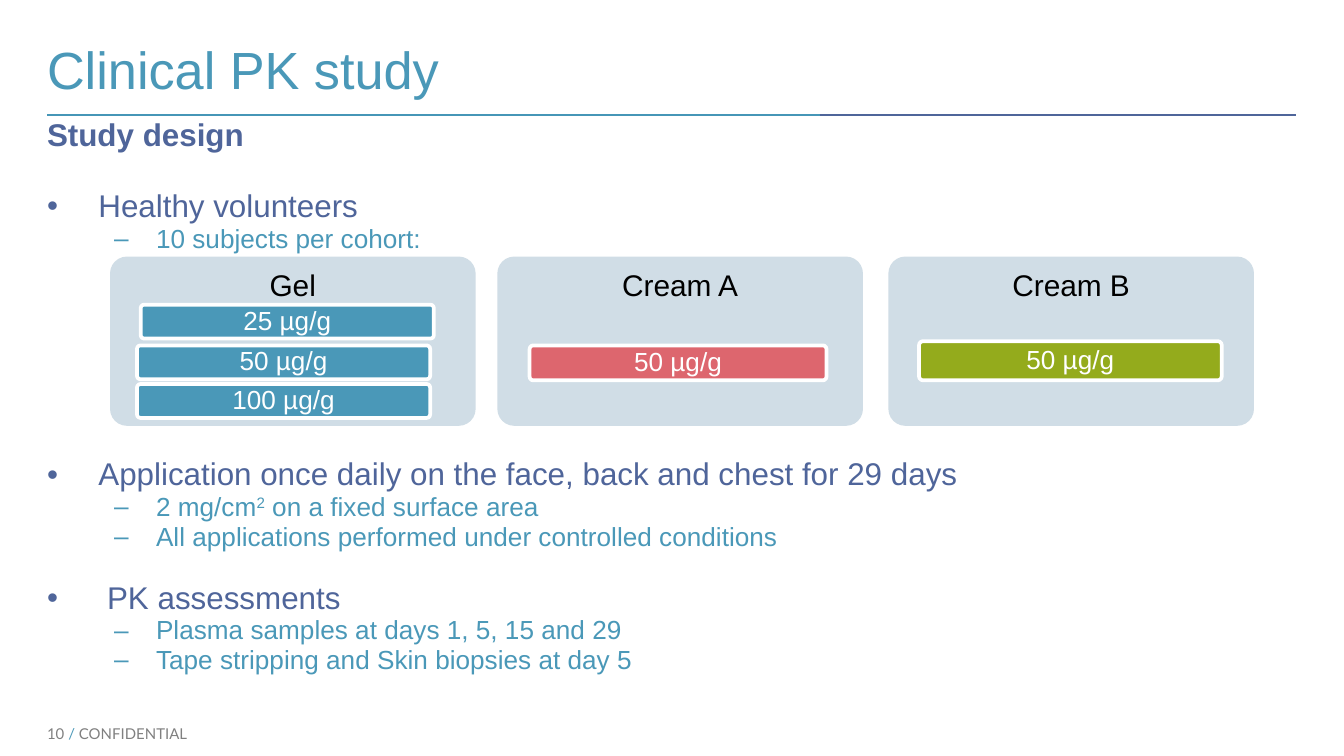
from lxml import etree
from pptx import Presentation
from pptx import util as u
from pptx.dml.color import RGBColor
from pptx.enum import shapes, text
from pptx.oxml.ns import qn

TEAL, NAVY, GREY = "4A98B8", "4F659A", "808080"
PALE, RED, GREEN = "D0DDE6", "DD666E", "94AB1C"
WHITE, BLACK = "FFFFFF", "000000"

PANELS = [
    # left, name, colour, pills as (label, x, y, width, height)
    (2.08, "Gel", TEAL, [("25 µg/g", 0.58, 0.91, 5.54, 0.64),
                         ("50 µg/g", 0.51, 1.68, 5.54, 0.64),
                         ("100 µg/g", 0.51, 2.41, 5.54, 0.64)]),
    (9.4, "Cream A", RED, [("50 µg/g", 0.61, 1.68, 5.61, 0.66)]),
    (16.79, "Cream B", GREEN, [("50 µg/g", 0.58, 1.6, 5.72, 0.74)]),
]
POINTS = [
    # level, space before in points, runs
    (0, 0, ["Study design"]),
    (1, 19, ["Healthy volunteers"]),
    (2, 0, ["10 subjects per cohort:"]),
    (1, 109, ["Application once daily on the face, back and chest for 29 days"]),
    (2, 0, ["2 mg/cm", "2", " on a fixed surface area"]),
    (2, 0, ["All applications performed under controlled conditions"]),
    (1, 15.5, [" PK assessments"]),
    (2, 0, ["Plasma samples at days 1, 5, 15 and 29"]),
    (2, 0, ["Tape stripping and Skin biopsies at day 5"]),
]
LEVELS = [
    dict(size=16.8, color=NAVY, bold=True),
    dict(size=16.8, color=NAVY, mark="•", left=0.97, hang=0.97),
    dict(size=14, color=TEAL, mark="–", left=2.06, hang=0.79),
]


def rgb(code):
    return RGBColor.from_string(code)


def assign(item, **vals):
    for key, val in vals.items():
        setattr(item, key, val)


def box(*vals):
    return [u.Cm(val) for val in vals]


def add_run(para, words, size, color, name="Arial", bold=False):
    run = para.add_run()
    run.text = words
    assign(run.font, size=u.Pt(size), name=name, bold=bold)
    run.font.color.rgb = rgb(color)
    return run


def set_frame(shape, anchor, pad=0):
    frame = shape.text_frame
    assign(frame, word_wrap=True, vertical_anchor=anchor,
           margin_left=u.Cm(pad), margin_right=u.Cm(pad),
           margin_top=u.Cm(pad), margin_bottom=u.Cm(pad))
    return frame


def add_area(slide, x, y, w, h, anchor=text.MSO_ANCHOR.TOP):
    return set_frame(slide.shapes.add_textbox(*box(x, y, w, h)), anchor)


def add_card(slide, x, y, w, h, fill, label, size, color, anchor, pad):
    """Rounded box with a centred label."""
    card = slide.shapes.add_shape(shapes.MSO_SHAPE.ROUNDED_RECTANGLE, *box(x, y, w, h))
    card.shadow.inherit = False
    card.adjustments[0] = 0.1
    card.fill.solid()
    card.fill.fore_color.rgb = rgb(fill)
    card.line.fill.background()
    para = set_frame(card, anchor, pad).paragraphs[0]
    assign(para, alignment=text.PP_ALIGN.CENTER, line_spacing=0.9)
    add_run(para, label, size, color)
    return card


def add_panel(slide, x, y, w, h, name, color, pills):
    add_card(slide, x, y, w, h, PALE, name, 16, BLACK, text.MSO_ANCHOR.TOP, 0.18)
    for label, dx, dy, pw, ph in pills:
        pill = add_card(slide, x + dx, y + dy, pw, ph, color, label, 14, WHITE,
                        text.MSO_ANCHOR.MIDDLE, 0.08)
        pill.line.color.rgb = rgb(WHITE)
        pill.line.width = u.Pt(2)


def add_rule(slide, x, y, end, color):
    rule = slide.shapes.add_connector(shapes.MSO_CONNECTOR.STRAIGHT, *box(x, y, end, y))
    rule.line.color.rgb = rgb(color)
    rule.line.width = u.Pt(1)
    etree.SubElement(rule._element.spPr, qn("a:effectLst"))


def add_header(slide, x, y, w, h):
    frame = add_area(slide, x, y, w, h, text.MSO_ANCHOR.BOTTOM)
    add_run(frame.paragraphs[0], "Clinical PK study", 28, TEAL)
    base, split = y + h + 0.28, x + 14.6
    add_rule(slide, x, base, split, "4696B7")
    add_rule(slide, split, base, x + w, NAVY)


def add_bullet(para, mark, color, left, hang):
    props = para._p.get_or_add_pPr()
    props.set("marL", str(u.Cm(left)))
    props.set("indent", str(-u.Cm(hang)))
    tint = etree.SubElement(props, qn("a:buClr"))
    etree.SubElement(tint, qn("a:srgbClr"), val=color)
    etree.SubElement(props, qn("a:buFont"), typeface="Arial")
    etree.SubElement(props, qn("a:buChar"), char=mark)


def add_body(slide, x, y, w, h):
    frame = add_area(slide, x, y, w, h)
    for i, (level, gap, runs) in enumerate(POINTS):
        para = frame.add_paragraph() if i else frame.paragraphs[0]
        look = LEVELS[level]
        para.line_spacing = 0.94
        if gap:
            para.space_before = u.Pt(gap)
        if level:
            para.level = level - 1
            add_bullet(para, look["mark"], look["color"], look["left"], look["hang"])
        for j, words in enumerate(runs):
            run = add_run(para, words, look["size"], look["color"],
                          bold=look.get("bold", False))
            if j == 1:  # the middle run is the exponent
                run.font._element.set("baseline", "30000")


def add_footer(slide, x, y, w, h):
    para = add_area(slide, x, y, w, h).paragraphs[0]
    for words, color in [("10 ", GREY), ("/ ", TEAL), ("CONFIDENTIAL", GREY)]:
        add_run(para, words, 8, color, "Lato")


def main():
    deck = Presentation()
    assign(deck, slide_width=u.Cm(25.4), slide_height=u.Cm(14.29))
    slide = deck.slides.add_slide(deck.slide_layouts[6])
    add_footer(slide, 0.89, 13.69, 5, 0.33)
    add_header(slide, 0.89, 0.25, 23.6, 1.65)
    for left, name, color, pills in PANELS:
        add_panel(slide, left, 4.85, 6.91, 3.2, name, color, pills)
    add_body(slide, 0.89, 2.24, 23.8, 11.5)
    deck.save("out.pptx")


if __name__ == "__main__":
    main()
